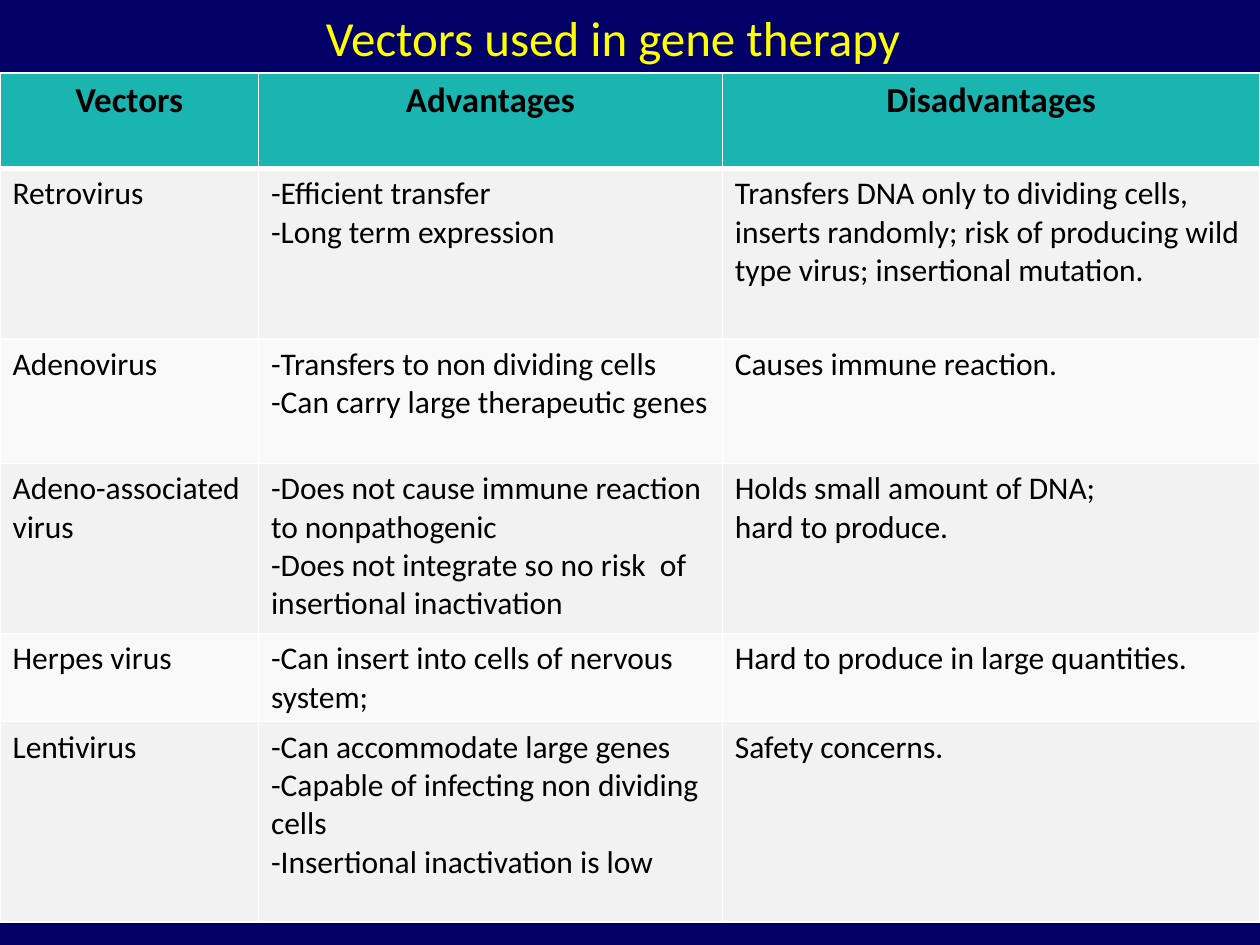
from lxml.etree import SubElement
from pptx import Presentation
from pptx.dml.color import RGBColor
from pptx.enum.text import MSO_AUTO_SIZE as AutoSize, PP_ALIGN as Align
from pptx.oxml.ns import qn
from pptx.util import Cm, Pt

TITLE = "Vectors used in gene therapy"
HEADERS = ["Vectors", "Advantages", "Disadvantages"]
VECTORS = [
    (["Retrovirus"],
     ["-Efficient transfer", "-Long term expression"],
     ["Transfers DNA only to dividing cells,",
      "inserts randomly; risk of producing wild type virus; insertional mutation."]),
    (["Adenovirus"],
     ["-Transfers to non dividing cells", "-Can carry large therapeutic genes"],
     ["Causes immune reaction."]),
    (["Adeno-associated virus"],
     ["-Does not cause immune reaction to nonpathogenic",
      "-Does not integrate so no risk  of insertional inactivation"],
     ["Holds small amount of DNA;", "hard to produce."]),
    (["Herpes virus"],
     ["-Can insert into cells of nervous system;"],
     ["Hard to produce in large quantities."]),
    (["Lentivirus"],
     ["-Can accommodate large genes",
      "-Capable of infecting non dividing cells",
      "-Insertional inactivation is low"],
     ["Safety concerns."]),
]
COL_WIDTHS = [5.21, 9.35, 10.84]
ROW_HEIGHTS = [1.93, 3.43, 2.51, 3.43, 1.78, 4.04]
TABLE_TOP = 1.47

FONT = "Calibri"
NAVY = RGBColor(0x00, 0x00, 0x66)
YELLOW = RGBColor(0xFF, 0xFF, 0x00)
TEAL = RGBColor(0x1B, 0xB5, 0xB1)
BLACK = RGBColor(0x00, 0x00, 0x00)
WHITE = RGBColor(0xFF, 0xFF, 0xFF)
BANDS = [RGBColor(0xF2, 0xF2, 0xF2), RGBColor(0xF9, 0xF9, 0xF9)]


def write(tf, lines, size=18, color=BLACK, bold=False, align=Align.LEFT):
    for i, line in enumerate(lines):
        p = tf.paragraphs[0] if i == 0 else tf.add_paragraph()
        p.alignment = align
        r = p.add_run()
        r.text = line
        r.font.name = FONT
        r.font.size = Pt(size)
        r.font.bold = bold
        r.font.color.rgb = color


def set_borders(cell, **widths):
    tc_pr = cell._tc.get_or_add_tcPr()
    for side in "LRTB":
        ln = SubElement(tc_pr, qn(f"a:ln{side}"), w=str(Pt(widths.get(side, 1))))
        fill = SubElement(ln, qn("a:solidFill"))
        SubElement(fill, qn("a:srgbClr"), val=str(WHITE))


def fill_cell(cell, color):
    cell.fill.solid()
    cell.fill.fore_color.rgb = color


def add_title(s):
    tf = s.shapes.add_textbox(Cm(6.32), Cm(0.03), Cm(12.22), Cm(1.45)).text_frame
    tf.word_wrap = False
    tf.auto_size = AutoSize.SHAPE_TO_FIT_TEXT
    write(tf, [TITLE], size=28, color=YELLOW)


def add_vector_table(s):
    table = s.shapes.add_table(
        len(ROW_HEIGHTS), len(COL_WIDTHS), Cm(0), Cm(TABLE_TOP),
        Cm(sum(COL_WIDTHS)), Cm(sum(ROW_HEIGHTS))).table
    for col, width in zip(table.columns, COL_WIDTHS):
        col.width = Cm(width)
    for row, height in zip(table.rows, ROW_HEIGHTS):
        row.height = Cm(height)
    for c, header in enumerate(HEADERS):
        cell = table.cell(0, c)
        set_borders(cell, B=3)
        fill_cell(cell, TEAL)
        write(cell.text_frame, [header], size=20, bold=True, align=Align.CENTER)
    for i, vector in enumerate(VECTORS):
        for c, lines in enumerate(vector):
            cell = table.cell(i + 1, c)
            set_borders(cell, T=3 if i == 0 else 1)
            fill_cell(cell, BANDS[i % 2])
            write(cell.text_frame, lines)


def main():
    prs = Presentation()
    prs.slide_width, prs.slide_height = Cm(25.4), Cm(19.05)
    s = prs.slides.add_slide(prs.slide_layouts[6])
    s.background.fill.solid()
    s.background.fill.fore_color.rgb = NAVY
    add_title(s)
    add_vector_table(s)
    prs.save("out.pptx")


if __name__ == "__main__":
    main()
